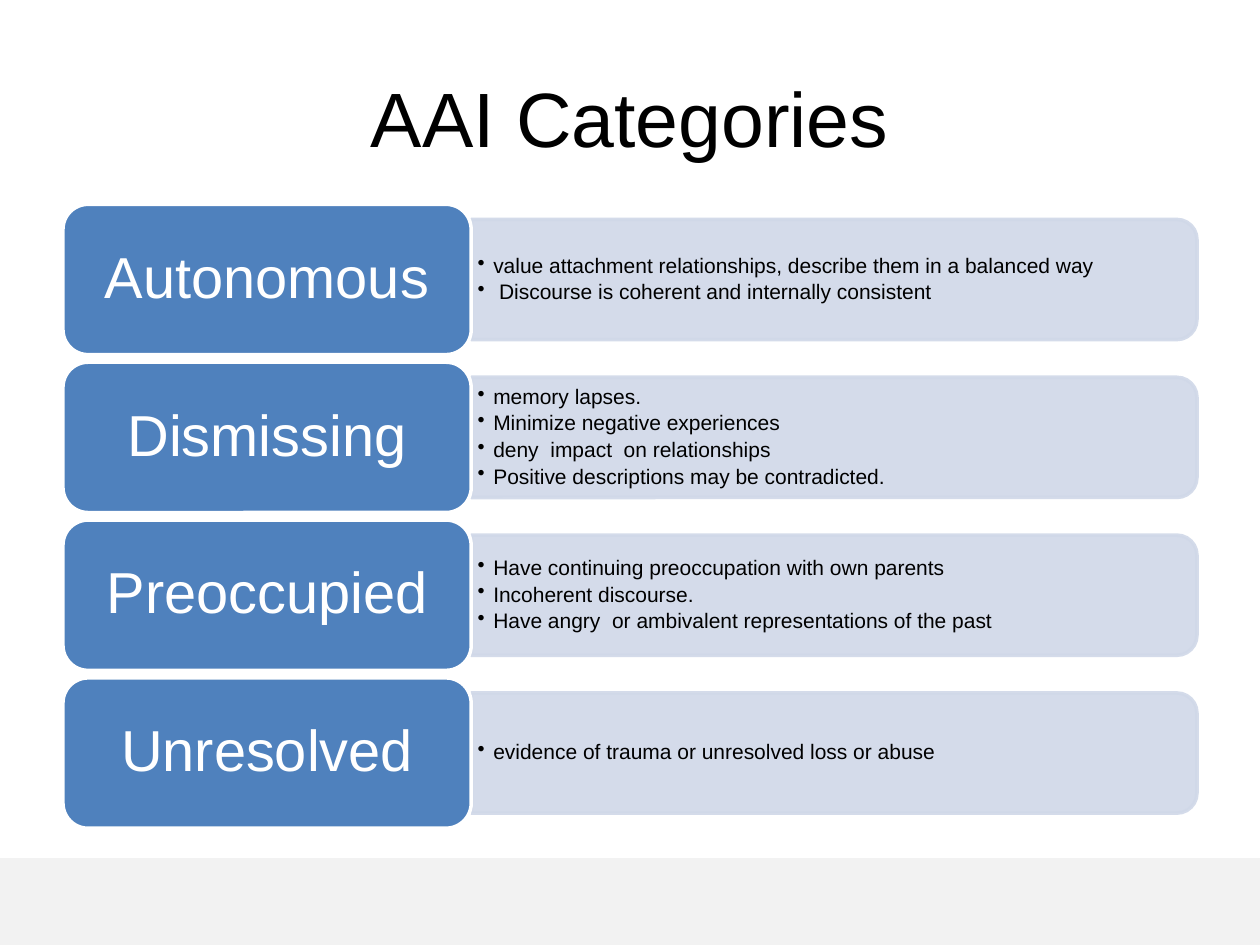
"""Build the AAI Categories slide with four labelled rows of traits."""
import pptx
import pptx.util
import pptx.dml.color
import pptx.enum.shapes
import pptx.enum.text
import pptx.oxml.ns
from lxml import etree

Pt = pptx.util.Pt
qn = pptx.oxml.ns.qn
Kind = pptx.enum.shapes.MSO_SHAPE
Align = pptx.enum.text.PP_ALIGN
Anchor = pptx.enum.text.MSO_ANCHOR

theme = {
    "font": "Arial",
    "black": "000000",
    "white": "FFFFFF",
    "blue": "4F81BD",
    "pale": "D0D8E8",
    "grey": "F2F2F2",
    "title": 44,
    "label": 33,
    "body": 12,
}

rows = [
    ("Autonomous", [
        "value attachment relationships, describe them in a balanced way",
        " Discourse is coherent and internally consistent",
    ]),
    ("Dismissing", [
        "memory lapses.",
        "Minimize negative experiences",
        "deny  impact  on relationships",
        "Positive descriptions may be contradicted.",
    ]),
    ("Preoccupied", [
        "Have continuing preoccupation with own parents",
        "Incoherent discourse.",
        "Have angry  or ambivalent representations of the past",
    ]),
    ("Unresolved", ["evidence of trauma or unresolved loss or abuse"]),
]


def add_box(kind, left, top, width, height, fill, line=None):
    box = slide.shapes.add_shape(kind, Pt(left), Pt(top), Pt(width), Pt(height))
    box.shadow.inherit = False
    box.fill.solid()
    box.fill.fore_color.rgb = pptx.dml.color.RGBColor.from_string(theme[fill])
    if line:
        box.line.color.rgb = pptx.dml.color.RGBColor.from_string(theme[line])
        box.line.width = Pt(2)
    else:
        box.line.fill.background()
    return box


def style_text(frame, size, color, align, side, edge):
    frame.word_wrap = True
    frame.vertical_anchor = Anchor.MIDDLE
    frame.margin_left = frame.margin_right = Pt(side)
    frame.margin_top = frame.margin_bottom = Pt(edge)
    for para in frame.paragraphs:
        para.alignment = align
        for run in para.runs:
            run.font.name = theme["font"]
            run.font.size = Pt(theme[size])
            run.font.color.rgb = pptx.dml.color.RGBColor.from_string(theme[color])


deck = pptx.Presentation()
deck.slide_width, deck.slide_height = Pt(720), Pt(540)
slide = deck.slides.add_slide(deck.slide_layouts[5])

add_box(Kind.RECTANGLE, 0, 490.3, 720, 49.7, "grey")

title = slide.shapes.title
title.left, title.top, title.width, title.height = Pt(36), Pt(21.6), Pt(648), Pt(90)
title.text_frame.text = "AAI Categories"
style_text(title.text_frame, "title", "black", Align.CENTER, 7.2, 3.6)

start, pitch = 116.8, 90.2
left, wide, high = 36, 233.3, 85.9
span, thick = 414.7, 68.7
edge = left + wide

for i, (name, traits) in enumerate(rows):
    top = start + i * pitch
    mid = top + high / 2

    bar = add_box(Kind.ROUND_2_SAME_RECTANGLE, edge + (span - thick) / 2,
                  mid - span / 2, thick, span, "pale", "pale")
    bar.rotation = 90
    for color in bar._element.spPr.iter(qn("a:srgbClr")):
        etree.SubElement(color, qn("a:alpha"), val="90000")

    note = slide.shapes.add_textbox(Pt(edge), Pt(mid - 31), Pt(411.3), Pt(62))
    note.text_frame.text = "\n".join(traits)
    for para in note.text_frame.paragraphs:
        para.level = 1
        para.line_spacing = 0.9
        para.space_after = Pt(2.2)
        props = para._p.get_or_add_pPr()
        props.set("marL", str(Pt(9)))
        props.set("indent", str(-Pt(9)))
        etree.SubElement(props, qn("a:buChar"), char="•")
    style_text(note.text_frame, "body", "black", Align.LEFT, 3.6, 1.8)

    label = add_box(Kind.ROUNDED_RECTANGLE, left, top, wide, high, "blue", "white")
    label.text_frame.text = name
    label.text_frame.paragraphs[0].line_spacing = 0.9
    style_text(label.text_frame, "label", "white", Align.CENTER, 10, 5)

deck.save("out.pptx")
